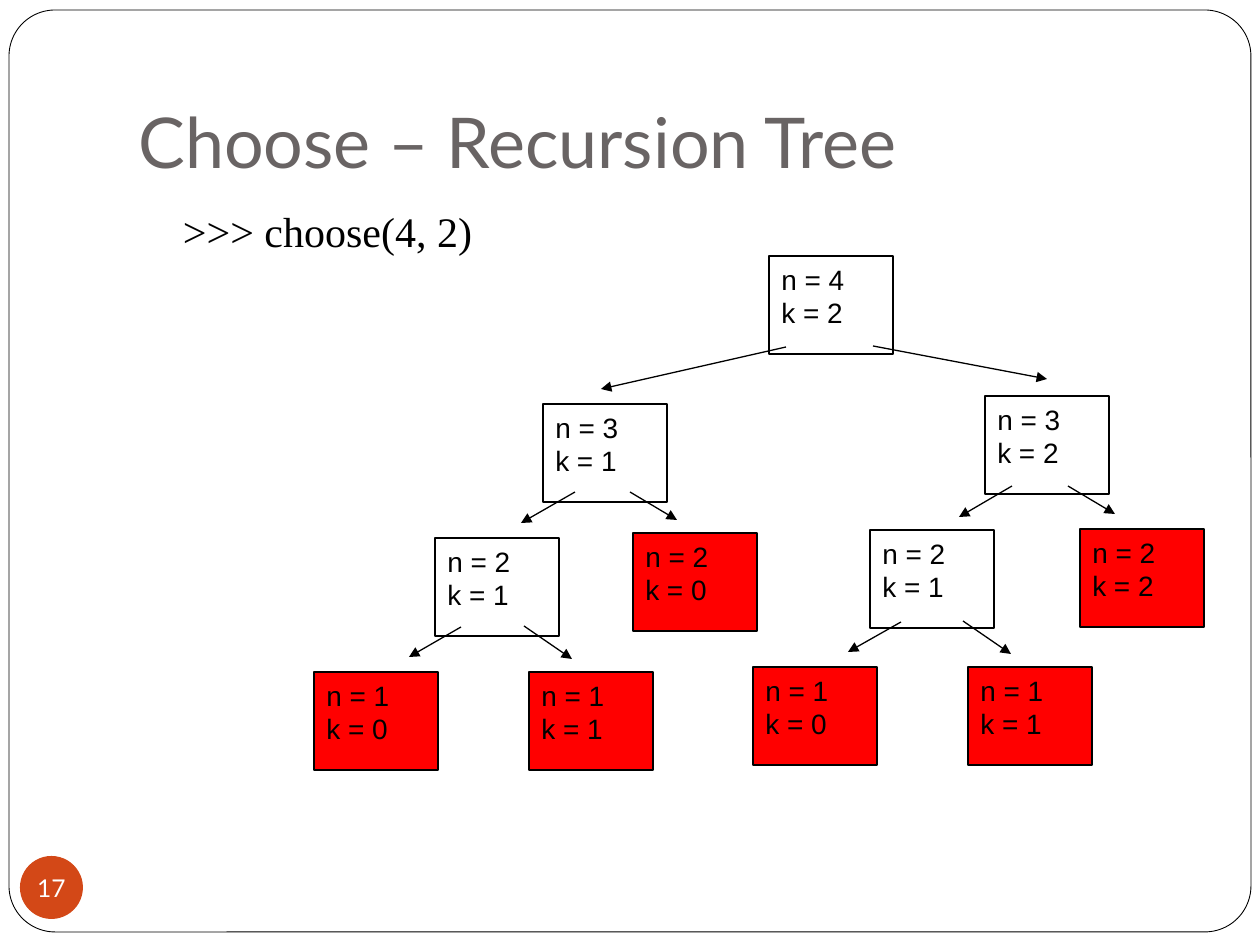
import pptx
import pptx.dml.color
import pptx.enum.shapes
import pptx.enum.text
import pptx.oxml
import pptx.util
from lxml import etree

PX = 914400 / 126
SLIDE_SIZE = (1260, 945)
BOX_SIZE = (124, 98)

FRAME = (9, 10, 1242, 922)
TITLE = ("Choose – Recursion Tree", (126, 38, 1071, 157))
CALL = (">>> choose(4, 2)", (126, 199, 1071, 630))
PAGE_NUMBER = ("17", (20, 856, 63, 63))

# n, k, left, top of each call
CALLS = [
    (4, 2, 769, 256),
    (3, 1, 543, 404),
    (3, 2, 985, 396),
    (2, 0, 633, 533),
    (2, 1, 435, 538),
    (2, 1, 870, 530),
    (2, 2, 1080, 529),
    (1, 0, 314, 672),
    (1, 1, 529, 672),
    (1, 0, 753, 667),
    (1, 1, 968, 667),
]

# start x, start y, end x, end y
ARROWS = [
    (786, 347, 601, 389), (873, 346, 1047, 379),
    (575, 492, 521, 523), (630, 492, 677, 520),
    (1012, 486, 959, 517), (1068, 486, 1115, 514),
    (461, 627, 409, 657), (524, 626, 572, 659),
    (901, 622, 848, 652), (963, 621, 1011, 654),
]

SHAPES = pptx.enum.shapes.MSO_SHAPE
ANCHOR = pptx.enum.text.MSO_ANCHOR
ALIGN = pptx.enum.text.PP_ALIGN


def px(*values):
    return [pptx.util.Emu(round(value * PX)) for value in values]


def color(hex_string):
    return pptx.dml.color.RGBColor.from_string(hex_string)


def set_line(line, width):
    line.color.rgb = color("000000")
    line.width = pptx.util.Pt(width)


def add_shape(slide, kind, place, fill=None, line_width=None):
    shape = slide.shapes.add_shape(kind, *px(*place))
    shape.shadow.inherit = False
    if fill:
        shape.fill.solid()
        shape.fill.fore_color.rgb = color(fill)
    else:
        shape.fill.background()
    if line_width:
        set_line(shape.line, line_width)
    else:
        shape.line.fill.background()
    return shape


def write(shape, lines, font, size, font_color, align=ALIGN.LEFT, **frame_format):
    frame = shape.text_frame
    frame_format = {"word_wrap": True, "vertical_anchor": ANCHOR.TOP} | frame_format
    for name, value in frame_format.items():
        setattr(frame, name, value)
    frame.text = "\n".join(lines)
    for paragraph in frame.paragraphs:
        paragraph.alignment = align
        paragraph.font.name = font
        paragraph.font.size = pptx.util.Pt(size)
        paragraph.font.color.rgb = color(font_color)


def add_call(slide, n, k, left, top):
    """Draw one call; base cases, where k is 0 or n, are red."""
    fill = "FF0000" if k in (0, n) else None
    box = add_shape(slide, SHAPES.RECTANGLE, (left, top, *BOX_SIZE), fill, 0.75)
    write(box, [f"n = {n}", f"k = {k}"], "Arial", 16, "000000")


def add_arrow(slide, points):
    arrow = slide.shapes.add_connector(
        pptx.enum.shapes.MSO_CONNECTOR.STRAIGHT, *px(*points))
    set_line(arrow.line, 0.75)
    tail = etree.SubElement(arrow.line._get_or_add_ln(), pptx.oxml.ns.qn("a:tailEnd"))
    tail.set("type", "triangle")
    etree.SubElement(arrow._element.spPr, pptx.oxml.ns.qn("a:effectLst"))


def main():
    presentation = pptx.Presentation()
    presentation.slide_width, presentation.slide_height = px(*SLIDE_SIZE)
    slide = presentation.slides.add_slide(presentation.slide_layouts[6])

    frame = add_shape(slide, SHAPES.ROUNDED_RECTANGLE, FRAME, "FFFFFF", 0.5)
    frame.adjustments[0] = 0.05

    text, place = TITLE
    title = slide.shapes.add_textbox(*px(*place))
    write(title, [text], "Lato", 40, "696464",
          vertical_anchor=ANCHOR.BOTTOM, margin_bottom=px(13)[0])

    text, place = PAGE_NUMBER
    badge = add_shape(slide, SHAPES.OVAL, place, "D34817")
    margins = {f"margin_{side}": 0 for side in ("left", "top", "right", "bottom")}
    write(badge, [text], "Lato", 14, "FFFFFF", ALIGN.CENTER,
          word_wrap=False, vertical_anchor=ANCHOR.MIDDLE, **margins)

    text, place = CALL
    call_text = slide.shapes.add_textbox(*px(*place))
    write(call_text, [text], "Times New Roman", 24, "000000", margin_left=px(57)[0])
    call_text.text_frame.paragraphs[0].space_before = pptx.util.Pt(3.7)

    for call in CALLS:
        add_call(slide, *call)
    for points in ARROWS:
        add_arrow(slide, points)

    presentation.save("out.pptx")


if __name__ == "__main__":
    main()
